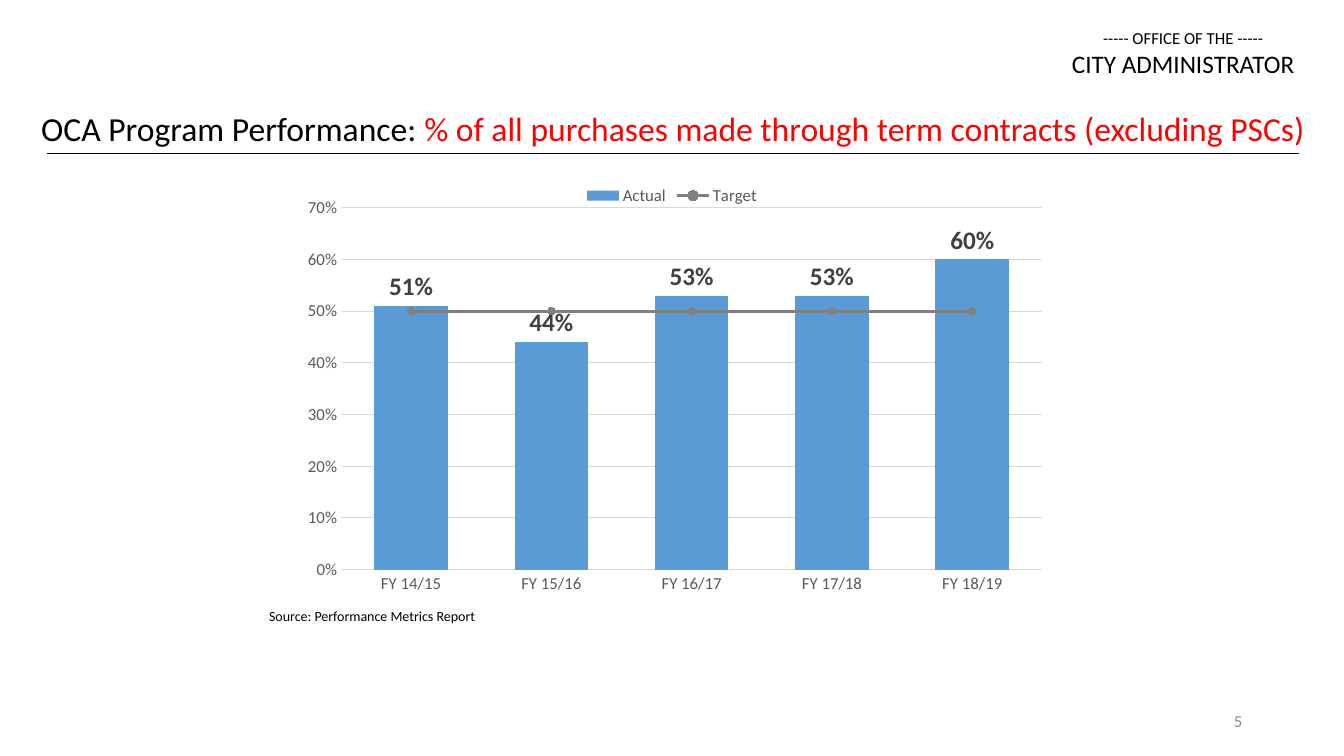
import pptx
import pptx.chart.data
import pptx.dml.color
import pptx.enum.chart
import pptx.enum.shapes
import pptx.enum.text
import pptx.oxml
import pptx.oxml.ns
import pptx.util
from lxml import etree

Inches, Pt = pptx.util.Inches, pptx.util.Pt
qn = pptx.oxml.ns.qn
enum = pptx.enum
ALIGN = enum.text.PP_ALIGN

# Content
FONT = "Calibri"
HEX = {"ink": "000000", "red": "FF0000", "page": "8C8C8C", "axis": "595959",
       "grid": "D9D9D9", "label": "404040", "bar": "5B9BD5", "goal": "808080"}

# Each text: box, alignment, wraps, paragraphs of (words, size, colour) runs
TEXTS = [
    ((10.52, 0.23, 2.43, 0.61), ALIGN.CENTER, False,
     [[("----- OFFICE OF THE -----", 12, "ink")],
      [("CITY ADMINISTRATOR", 18, "ink")]]),
    ((0.31, 1.02, 12.77, 0.5), ALIGN.LEFT, False,
     [[("OCA Program Performance: ", 24, "ink"),
       ("% of all purchases made through term contracts (excluding PSCs)", 24, "red")]]),
    ((2.57, 5.98, 2.28, 0.27), ALIGN.LEFT, False,
     [[("Source: Performance Metrics Report", 10, "ink")]]),
    ((9.42, 6.95, 3, 0.4), ALIGN.RIGHT, True, [[("5", 12, "page")]]),
]
RULE = (0.47, 1.52, 12.88, 1.52)
BOX = (2.83, 1.73, 7.67, 4.25)
PLOT = {"x": 0.072, "y": 0.078, "w": 0.907, "h": 0.845}
YEARS = ["FY 14/15", "FY 15/16", "FY 16/17", "FY 17/18", "FY 18/19"]
DATA = {"Actual": [0.51, 0.44, 0.53, 0.53, 0.6], "Target": [0.5] * 5}


def put(item, **vals):
    for name, val in vals.items():
        setattr(item, name, val)


def rgb(key):
    return pptx.dml.color.RGBColor.from_string(HEX[key])


def style(font, size, key, bold=False):
    put(font, name=FONT, size=Pt(size), bold=bold)
    font.color.rgb = rgb(key)


def fill(form, key):
    form.fill.solid()
    form.fill.fore_color.rgb = rgb(key)


def stroke(line, key, width):
    line.color.rgb = rgb(key)
    line.width = Pt(width)


def write(page, box, align, wrap, paras):
    frame = page.shapes.add_textbox(*map(Inches, box)).text_frame
    put(frame, word_wrap=wrap)
    if wrap:
        put(frame, vertical_anchor=enum.text.MSO_ANCHOR.MIDDLE)
    else:
        put(frame, auto_size=enum.text.MSO_AUTO_SIZE.SHAPE_TO_FIT_TEXT)
    for num, runs in enumerate(paras):
        para = frame.add_paragraph() if num else frame.paragraphs[0]
        para.alignment = align
        for words, size, key in runs:
            run = para.add_run()
            run.text = words
            style(run.font, size, key)


def split(chart):
    """Move the second series to a line plot on the same axes."""
    bars = chart.plots[0]
    group = bars.series[1]._element.getparent()
    ser = bars.series[1]._element
    for old in ser.findall(qn("c:invertIfNegative")):
        ser.remove(old)
    line = pptx.oxml.parse_xml(
        '<c:lineChart xmlns:c="%s"><c:grouping val="standard"/>'
        '<c:varyColors val="0"/><c:marker val="1"/></c:lineChart>'
        % pptx.oxml.ns.nsuri("c"))
    line.insert(2, ser)
    for axis in group.findall(qn("c:axId")):
        etree.SubElement(line, qn("c:axId")).set("val", axis.get("val"))
    group.addnext(line)


def place(chart):
    """Fix the inner plot area as shares of the chart."""
    area = chart._chartSpace.chart.plotArea
    for old in area.findall(qn("c:layout")):
        area.remove(old)
    layout = etree.Element(qn("c:layout"))
    area.insert(0, layout)
    manual = etree.SubElement(layout, qn("c:manualLayout"))
    marks = {"layoutTarget": "inner", "xMode": "edge", "yMode": "edge", **PLOT}
    for tag, val in marks.items():
        etree.SubElement(manual, qn("c:" + tag)).set("val", str(val))


def draw(page):
    data = pptx.chart.data.CategoryChartData(number_format="0%")
    data.categories = YEARS
    for name, vals in DATA.items():
        data.add_series(name, vals)
    kind = enum.chart.XL_CHART_TYPE.COLUMN_CLUSTERED
    chart = page.shapes.add_chart(kind, *map(Inches, BOX), data).chart
    put(chart, has_title=False, has_legend=True)
    style(chart.font, 10, "ink")
    put(chart.legend, position=enum.chart.XL_LEGEND_POSITION.TOP,
        include_in_layout=False)
    style(chart.legend.font, 12, "axis")
    split(chart)
    place(chart)

    # Axes
    cat, val = chart.category_axis, chart.value_axis
    none = enum.chart.XL_TICK_MARK.NONE
    for axis in (cat, val):
        put(axis, major_tick_mark=none, minor_tick_mark=none)
        style(axis.tick_labels.font, 12, "axis")
    stroke(cat.format.line, "grid", 0.75)
    put(val, minimum_scale=0, maximum_scale=0.7, major_unit=0.1,
        has_major_gridlines=True)
    put(val.tick_labels, number_format="0%", number_format_is_linked=False)
    val.format.line.fill.background()
    stroke(val.major_gridlines.format.line, "grid", 0.75)

    # Bars and their labels
    bars, goals = chart.plots
    put(bars, gap_width=91, vary_by_categories=False)
    actual, goal = bars.series[0], goals.series[0]
    fill(actual.format, "bar")
    put(actual.data_labels, show_value=True, number_format="0%",
        number_format_is_linked=False,
        position=enum.chart.XL_LABEL_POSITION.OUTSIDE_END)
    style(actual.data_labels.font, 18, "label", True)

    # Target line
    goal.smooth = False
    stroke(goal.format.line, "goal", 2.25)
    put(goal.marker, style=enum.chart.XL_MARKER_STYLE.CIRCLE, size=5)
    fill(goal.marker.format, "goal")
    stroke(goal.marker.format.line, "goal", 0.75)


def main():
    deck = pptx.Presentation()
    put(deck, slide_width=Inches(13.33), slide_height=Inches(7.5))
    page = deck.slides.add_slide(deck.slide_layouts[6])
    for text in TEXTS:
        write(page, *text)

    # Rule under the title
    rule = page.shapes.add_connector(
        enum.shapes.MSO_CONNECTOR.STRAIGHT, *map(Inches, RULE))
    stroke(rule.line, "ink", 0.5)
    etree.SubElement(rule._element.spPr, qn("a:effectLst"))

    draw(page)
    deck.save("out.pptx")


if __name__ == "__main__":
    main()
